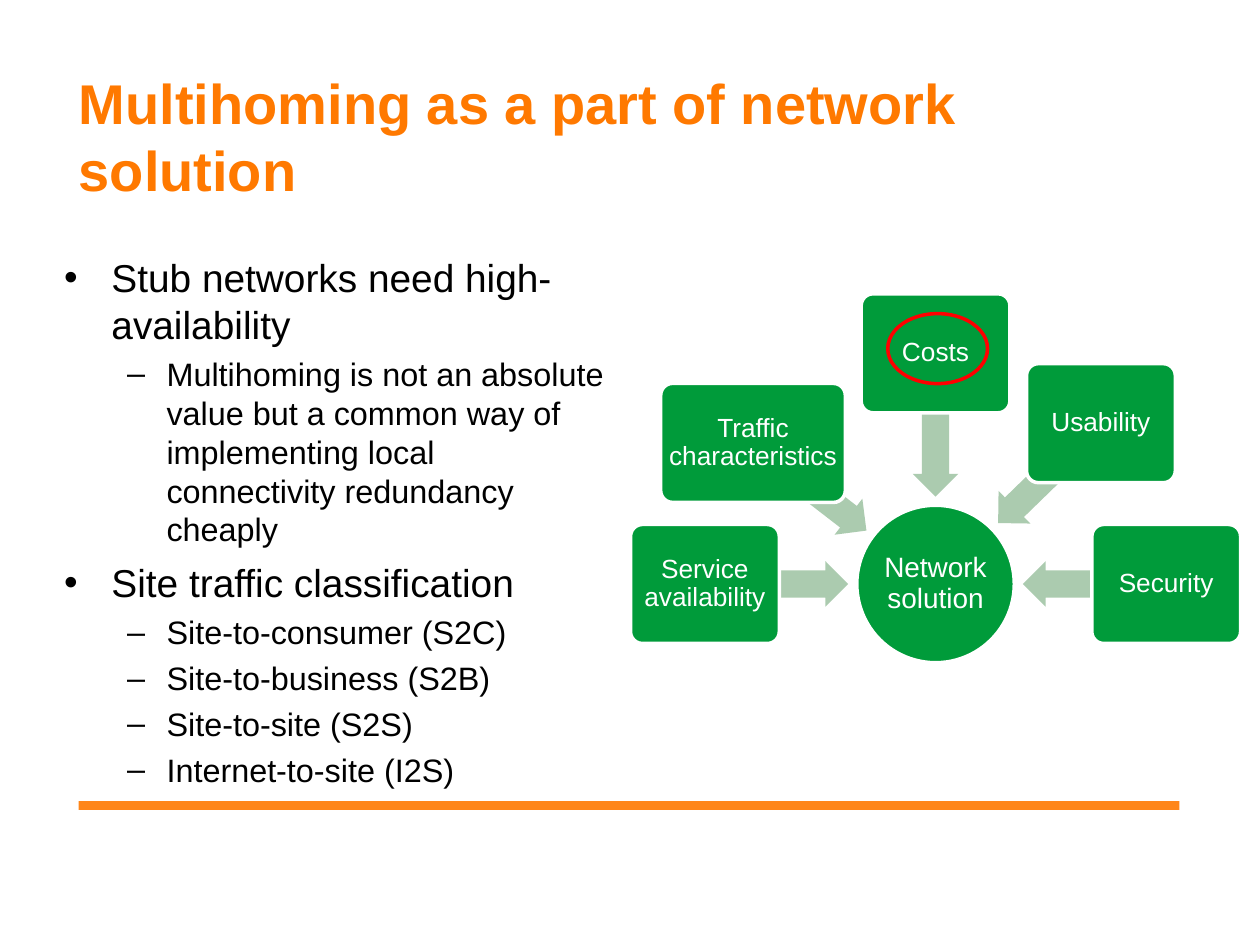
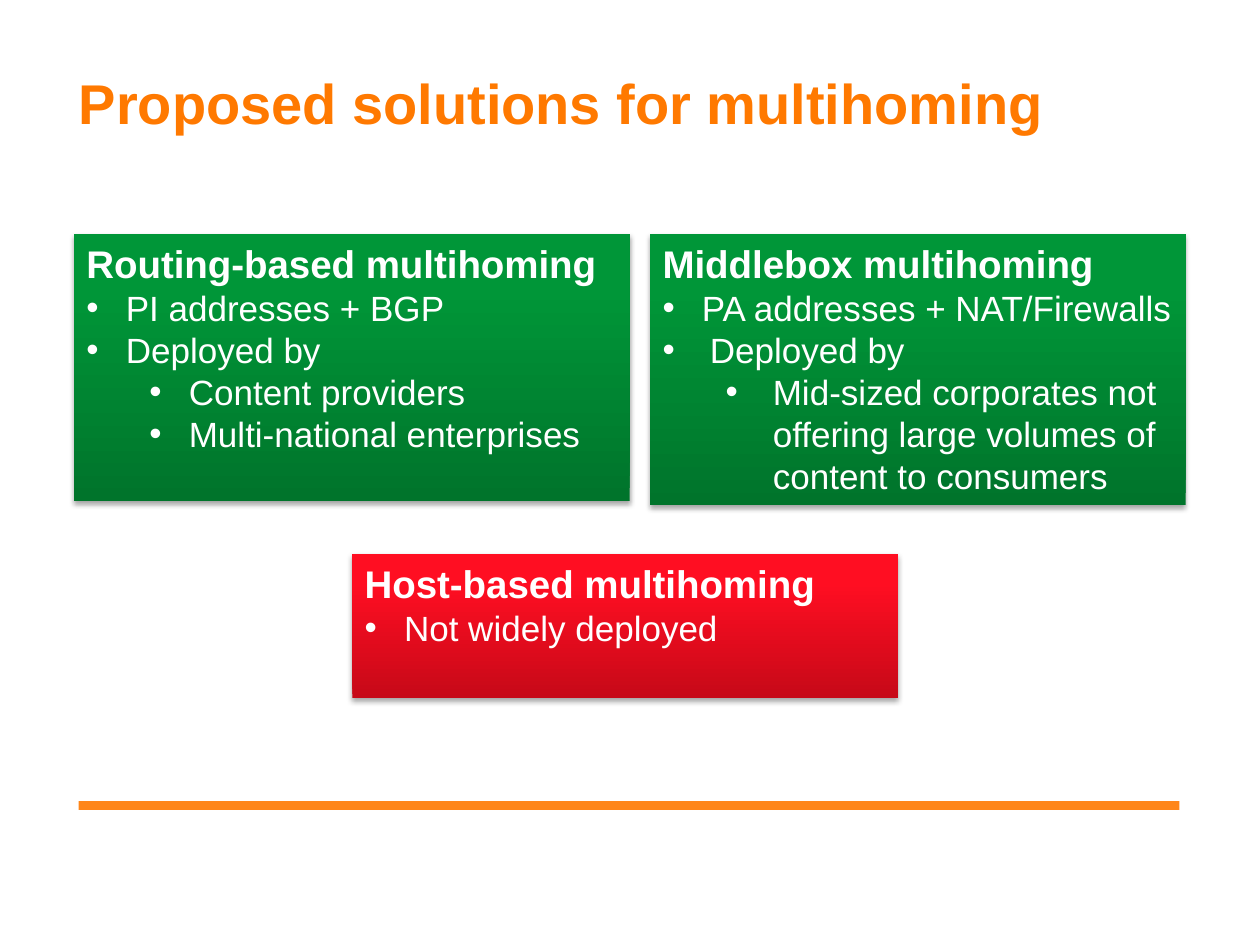
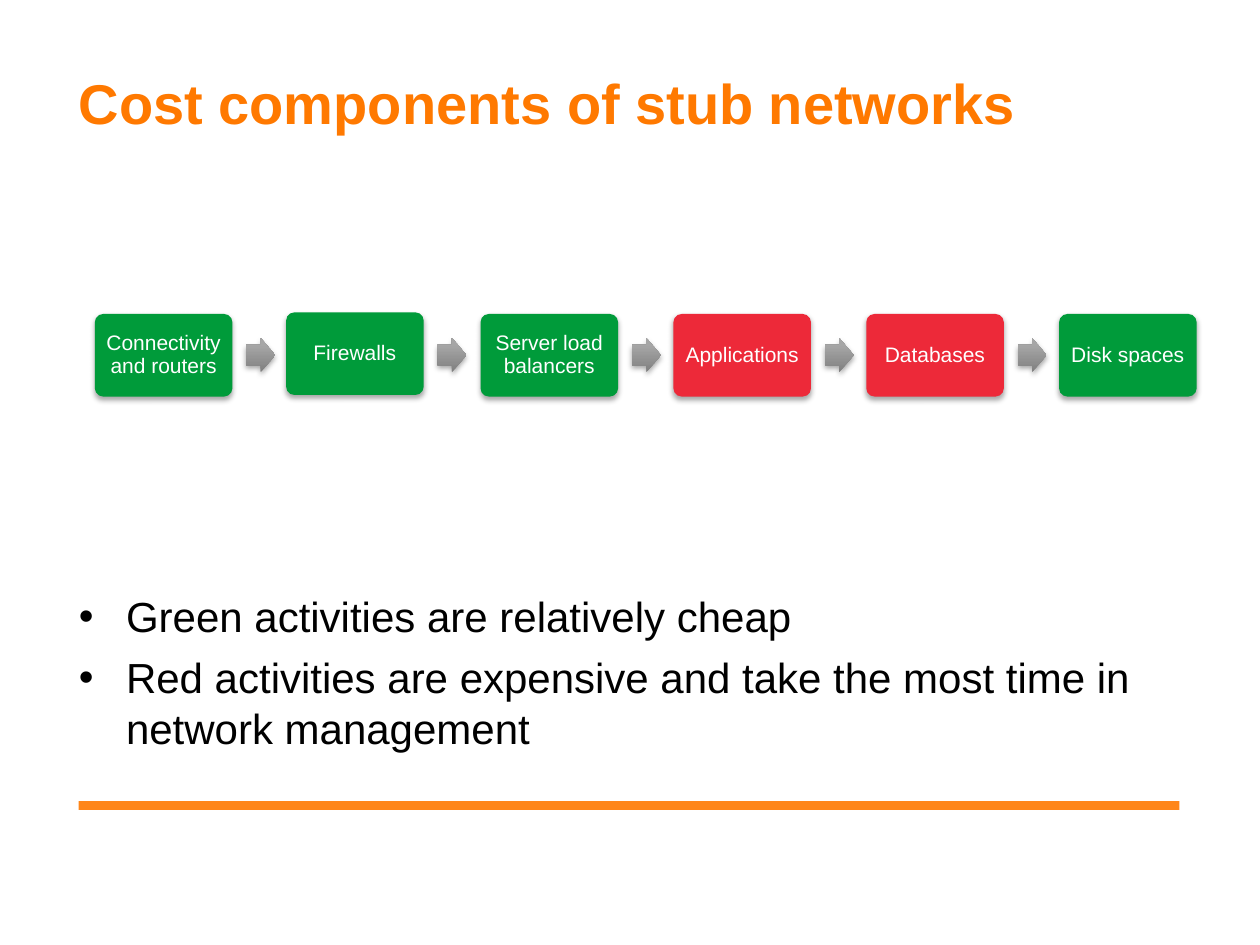
import math
from dataclasses import dataclass

from lxml import etree
from pptx import Presentation
from pptx.dml.color import RGBColor
from pptx.enum.shapes import MSO_SHAPE
from pptx.enum.text import MSO_ANCHOR, PP_ALIGN
from pptx.oxml.ns import qn
from pptx.util import Pt

RECTANGLE = MSO_SHAPE.RECTANGLE
ROUNDED = MSO_SHAPE.ROUNDED_RECTANGLE
OVAL = MSO_SHAPE.OVAL
LEFT_ARROW = MSO_SHAPE.LEFT_ARROW
RIGHT_ARROW = MSO_SHAPE.RIGHT_ARROW
TOP, MIDDLE = MSO_ANCHOR.TOP, MSO_ANCHOR.MIDDLE
LEFT, CENTER = PP_ALIGN.LEFT, PP_ALIGN.CENTER

FONT = "Arial"
ORANGE, GREEN, RED = "FF7900", "009B3A", "ED2939"
SAGE, BLACK, WHITE, RING_RED = "ABCBAF", "000000", "FFFFFF", "FF0000"
GREEN_FADE = ((0, "00742B"), (80, "009638"), (100, "009738"))
RED_FADE = ((0, "C70918"), (80, "FF0E22"), (100, "FF1023"))
GREY_FADE = ((0, "808080"), (80, "A6A6A6"), (100, "A7A7A7"))


@dataclass(frozen=True)
class Area:
    left: float
    top: float
    width: float
    height: float


@dataclass(frozen=True)
class Style:
    size: float
    color: str = BLACK
    bold: bool = False
    bullet: str = ""
    margin: float = 0
    hanging: float = 0
    before: float = 0
    spacing: float = 1
    align: PP_ALIGN = LEFT


@dataclass(frozen=True)
class Line:
    text: str
    style: Style


@dataclass(frozen=True)
class Factor:
    label: str
    angle: float
    width: float = 85


@dataclass(frozen=True)
class Panel:
    area: Area
    fade: tuple
    lines: tuple


@dataclass(frozen=True)
class Step:
    label: str
    color: str = GREEN
    shift: float = 0


TITLE = Style(32, ORANGE, True)
TOPIC = Style(22.2, bullet="•", margin=27, hanging=27, before=6)
DETAIL = Style(18.5, bullet="–", margin=58.5, hanging=22.5, before=4)
REMARK = Style(24, bullet="•", margin=27, hanging=27, before=6)
HUB_LABEL = Style(16, WHITE, spacing=0.9, align=CENTER)
FACTOR_LABEL = Style(15, WHITE, spacing=0.9, align=CENTER)
STEP_LABEL = Style(12, WHITE, spacing=0.9, align=CENTER)
HEADING = Style(22, WHITE, True)
POINT = Style(20, WHITE, bullet="•", margin=22.5, hanging=22.5)
WIDE_POINT = Style(20, WHITE, bullet="•", margin=27, hanging=27)
SUBPOINT = Style(20, WHITE, bullet="•", margin=58.5, hanging=22.5)
WIDE_SUBPOINT = Style(20, WHITE, bullet="•", margin=63, hanging=27)

HUB_X, HUB_Y, HUB_SIZE = 534.6, 333.7, 90
ARROW_RADIUS, FACTOR_RADIUS = 90.9, 131.8
FACTORS = (
    Factor("Service availability", 180),
    Factor("Traffic characteristics", 217.7, 105.5),
    Factor("Costs", 270),
    Factor("Usability", 315.8),
    Factor("Security", 0),
)

ARGUMENTS = (
    Line("Stub networks need high-availability", TOPIC),
    Line("Multihoming is not an absolute value but a common way of "
         "implementing local connectivity redundancy cheaply", DETAIL),
    Line("Site traffic classification", TOPIC),
    Line("Site-to-consumer (S2C)", DETAIL),
    Line("Site-to-business (S2B)", DETAIL),
    Line("Site-to-site (S2S)", DETAIL),
    Line("Internet-to-site (I2S)", DETAIL),
)

PANELS = (
    Panel(Area(42.3, 133.8, 317.5, 152.5), GREEN_FADE, (
        Line("Routing-based multihoming", HEADING),
        Line("PI addresses + BGP", POINT),
        Line("Deployed by", POINT),
        Line("Content providers", SUBPOINT),
        Line("Multi-national enterprises", SUBPOINT),
    )),
    Panel(Area(371.5, 133.8, 306, 155), GREEN_FADE, (
        Line("Middlebox multihoming", HEADING),
        Line("PA addresses + NAT/Firewalls", POINT),
        Line("Deployed by", WIDE_POINT),
        Line("Mid-sized corporates not offering large volumes of "
             "content to consumers", WIDE_SUBPOINT),
    )),
    Panel(Area(201.3, 316.7, 312, 82), RED_FADE, (
        Line("Host-based multihoming", HEADING),
        Line("Not widely deployed", POINT),
    )),
)

STEPS = (
    Step("Connectivity and routers"),
    Step("Firewalls", shift=-0.9),
    Step("Server load balancers"),
    Step("Applications", RED),
    Step("Databases", RED),
    Step("Disk spaces"),
)

REMARKS = (
    Line("Green activities are relatively cheap", REMARK),
    Line("Red activities are expensive and take the most time in "
         "network management", REMARK),
)


def rgb(color: str) -> RGBColor:
    return RGBColor.from_string(color)


def centered(x: float, y: float, width: float, height: float) -> Area:
    return Area(x - width / 2, y - height / 2, width, height)


def bounds(area: Area) -> tuple:
    return Pt(area.left), Pt(area.top), Pt(area.width), Pt(area.height)


def add_color(parent, color: str, alpha: int = 100) -> None:
    node = etree.SubElement(parent, qn("a:srgbClr"), val=color)
    if alpha < 100:
        etree.SubElement(node, qn("a:alpha"), val=str(alpha * 1000))


def add_shape(page, kind, area: Area, color: str = "", outline: str = ""):
    shape = page.shapes.add_shape(kind, *bounds(area))
    shape.shadow.inherit = False
    if color:
        shape.fill.solid()
        shape.fill.fore_color.rgb = rgb(color)
    else:
        shape.fill.background()
    if outline:
        shape.line.color.rgb = rgb(outline)
        shape.line.width = Pt(2)
    else:
        shape.line.fill.background()
    if kind == ROUNDED:
        shape.adjustments[0] = 0.1
    elif kind in (LEFT_ARROW, RIGHT_ARROW):
        shape.adjustments[0] = 0.6
        shape.adjustments[1] = 0.5
    return shape


def fade(shape, stops: tuple) -> None:
    shape.fill.gradient()
    shape.fill.gradient_angle = 90
    stop_list = shape._element.spPr.find(".//" + qn("a:gsLst"))
    for stop in list(stop_list):
        stop_list.remove(stop)
    for position, color in stops:
        stop = etree.SubElement(stop_list, qn("a:gs"), pos=str(position * 1000))
        add_color(stop, color)


def cast_shadow(shape) -> None:
    effects = shape._element.spPr.find(qn("a:effectLst"))
    shadow = etree.SubElement(
        effects, qn("a:outerShdw"), blurRad=str(Pt(3.1)), dist=str(Pt(1.8)),
        dir="5400000", rotWithShape="0")
    add_color(shadow, BLACK, 35)


def write(shape, lines: tuple, anchor=TOP, inset_x: float = 0,
          inset_y: float = 0) -> None:
    frame = shape.text_frame
    frame.word_wrap = True
    frame.vertical_anchor = anchor
    frame.margin_left = frame.margin_right = Pt(inset_x)
    frame.margin_top = frame.margin_bottom = Pt(inset_y)
    for index, line in enumerate(lines):
        style = line.style
        para = frame.add_paragraph() if index else frame.paragraphs[0]
        para.text = line.text
        para.alignment = style.align
        para.line_spacing = style.spacing
        if index:
            para.space_before = Pt(style.before)
        if style.bullet:
            properties = para._p.get_or_add_pPr()
            properties.set("marL", str(Pt(style.margin)))
            properties.set("indent", str(-Pt(style.hanging)))
            etree.SubElement(properties, qn("a:buFont"), typeface=FONT)
            etree.SubElement(properties, qn("a:buChar"), char=style.bullet)
        for span in para.runs:
            span.font.name = FONT
            span.font.size = Pt(style.size)
            span.font.bold = style.bold
            span.font.color.rgb = rgb(style.color)


def add_text(page, area: Area, lines: tuple) -> None:
    write(page.shapes.add_textbox(*bounds(area)), lines)


def add_page(deck, title: str):
    page = deck.slides.add_slide(deck.slide_layouts[6])
    band = add_shape(page, RECTANGLE, Area(45, 457.8, 629, 5), ORANGE)
    color = band._element.spPr.find(qn("a:solidFill")).find(qn("a:srgbClr"))
    etree.SubElement(color, qn("a:alpha"), val="90000")
    add_text(page, Area(45, 38.9, 629.5, 85), (Line(title, TITLE),))
    return page


def add_factor(page, factor: Factor) -> None:
    across = math.cos(math.radians(factor.angle))
    down = math.sin(math.radians(factor.angle))
    arrow = add_shape(page, LEFT_ARROW, centered(
        HUB_X + ARROW_RADIUS * across, HUB_Y + ARROW_RADIUS * down, 82, 26), SAGE)
    arrow.rotation = factor.angle
    box = add_shape(page, ROUNDED, centered(
        HUB_X + FACTOR_RADIUS * across, HUB_Y + FACTOR_RADIUS * down,
        factor.width, 68), GREEN, WHITE)
    write(box, (Line(factor.label, FACTOR_LABEL),), MIDDLE, 2, 2)


def build_network_page(deck) -> None:
    page = add_page(deck, "Multihoming as a part of network solution")
    add_text(page, Area(36.7, 145, 310, 305), ARGUMENTS)
    hub = add_shape(page, OVAL, centered(HUB_X, HUB_Y, HUB_SIZE, HUB_SIZE),
                    GREEN, WHITE)
    write(hub, (Line("Network solution", HUB_LABEL),), MIDDLE, 0.8, 0.8)
    for factor in FACTORS:
        add_factor(page, factor)
    add_shape(page, OVAL, Area(507.3, 179.2, 57, 40), outline=RING_RED)


def build_solutions_page(deck) -> None:
    page = add_page(deck, "Proposed solutions for multihoming")
    for panel in PANELS:
        box = add_shape(page, RECTANGLE, panel.area)
        fade(box, panel.fade)
        cast_shadow(box)
        write(box, panel.lines, TOP, 7.2, 3.6)


def build_costs_page(deck) -> None:
    page = add_page(deck, "Cost components of stub networks")
    width, height, pitch = 78.6, 47.2, 110.2
    for index, step in enumerate(STEPS):
        left = 54.2 + index * pitch + step.shift
        top = 179.4 + step.shift
        box = add_shape(page, ROUNDED, Area(left, top, width, height), step.color)
        cast_shadow(box)
        write(box, (Line(step.label, STEP_LABEL),), MIDDLE, 3.6, 3.6)
        if index < len(STEPS) - 1:
            arrow = add_shape(page, RIGHT_ARROW,
                              Area(left + width + 7.9, 193.2, 16.6, 19.5))
            fade(arrow, GREY_FADE)
            cast_shadow(arrow)
    add_text(page, Area(45, 337.7, 629.5, 112), REMARKS)


def main() -> None:
    deck = Presentation()
    deck.slide_width, deck.slide_height = Pt(720), Pt(540)
    build_network_page(deck)
    build_solutions_page(deck)
    build_costs_page(deck)
    deck.save("out.pptx")


if __name__ == "__main__":
    main()
